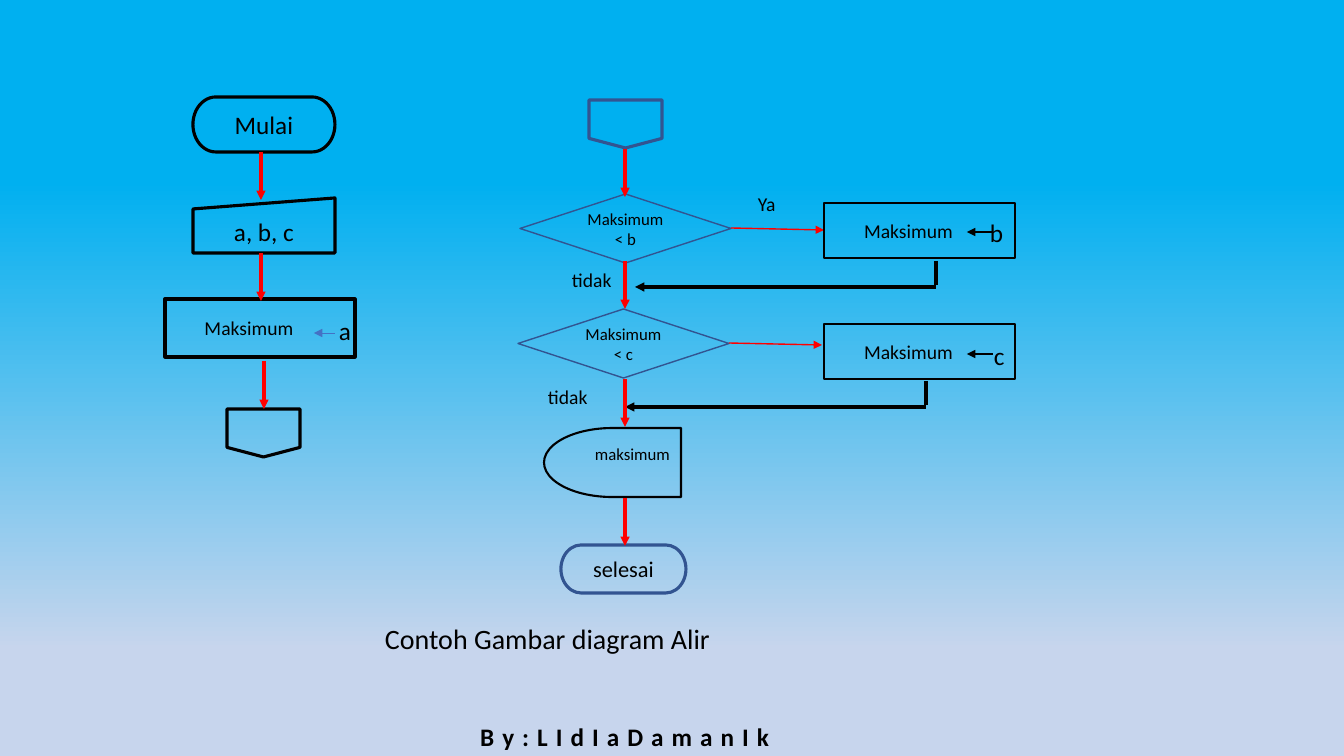
from lxml.etree import SubElement
from pptx import Presentation
from pptx.dml.color import RGBColor
from pptx.enum.shapes import MSO_CONNECTOR as Link, MSO_SHAPE as Shape
from pptx.enum.text import MSO_ANCHOR as Anchor, MSO_AUTO_SIZE as AutoSize, PP_ALIGN as Align
from pptx.oxml.ns import qn
from pptx.util import Pt

BLACK, RED, NAVY, BLUE = "000000", "FF0000", "325491", "4472C4"
SKY, MIST = "00B0F0", "C7D5ED"


def px(length):
    return round(length * 914400 / 100.8)


def color(code):
    return RGBColor.from_string(code)


def apply(target, formats):
    for key, value in formats.items():
        setattr(target, key, value)


class Flowchart:
    font = "Calibri"

    def __init__(self, slide):
        self.slide = slide

    def background(self, stops):
        fill = self.slide.background.fill
        fill.gradient()
        fill.gradient_angle = 270
        for stop, (position, code) in zip(fill.gradient_stops, stops):
            stop.position = position
            stop.color.rgb = color(code)

    def wording(self, frame, content, size, align, bold=False):
        paragraph = frame.paragraphs[0]
        paragraph.alignment = align
        run = paragraph.add_run()
        run.text = content
        apply(run.font, {"name": self.font, "size": Pt(size), "bold": bold})
        run.font.color.rgb = color(BLACK)
        return run

    def outline(self, line, code, weight):
        line.color.rgb = color(code)
        line.width = Pt(weight)

    def node(self, kind, box, code, weight, content="", size=18, shift=0, rotation=0):
        shape = self.slide.shapes.add_shape(kind, *map(px, box))
        shape.shadow.inherit = False
        shape.rotation = rotation
        shape.fill.background()
        self.outline(shape.line, code, weight)
        if content:
            frame = shape.text_frame
            apply(frame, {"word_wrap": True, "vertical_anchor": Anchor.MIDDLE,
                          "margin_right": px(10 + 2 * shift)})
            self.wording(frame, content, size, Align.CENTER)

    def label(self, box, content, size, align=Align.LEFT, bold=False):
        frame = self.slide.shapes.add_textbox(*map(px, box)).text_frame
        apply(frame, {"word_wrap": True, "auto_size": AutoSize.SHAPE_TO_FIT_TEXT})
        return self.wording(frame, content, size, align, bold)

    def link(self, start, end, code, weight, arrow=True):
        connector = self.slide.shapes.add_connector(
            Link.STRAIGHT, *map(px, (*start, *end)))
        self.outline(connector.line, code, weight)
        properties = connector._element.spPr
        if arrow:
            SubElement(properties.find(qn("a:ln")), qn("a:tailEnd"), type="triangle")
        SubElement(properties, qn("a:effectLst"))


def main():
    deck = Presentation()
    apply(deck, {"slide_width": px(1344), "slide_height": px(756)})
    chart = Flowchart(deck.slides.add_slide(deck.slide_layouts[6]))
    chart.background([(0.24, SKY), (0.86, MIST)])

    byline = chart.label((436, 716, 378, 40), "B y : L I d I a D a m a n I k",
                         18, Align.CENTER, True)
    byline._r.get_or_add_rPr().set("spc", "85")

    chart.node(Shape.FLOWCHART_TERMINATOR, (193, 97, 142, 55), BLACK, 2.25, "Mulai")
    chart.node(Shape.FLOWCHART_MANUAL_INPUT, (193, 198, 142, 55), BLACK, 2.25, "a, b, c")
    chart.node(Shape.FLOWCHART_PROCESS, (165, 299, 190, 58), BLACK, 2.25,
               "Maksimum", 14, shift=11)
    chart.link((335, 333), (314, 333), BLUE, 0.5)
    chart.label((329, 310, 32, 40), "a", 18)

    for left, top, code in ((227, 409, BLACK), (589, 100, NAVY)):
        chart.node(Shape.FLOWCHART_OFFPAGE_CONNECTOR, (left, top, 73, 48), code, 2.25)

    for left, top, test in ((520, 194, "Maksimum < b"), (518, 309, "Maksimum < c")):
        chart.node(Shape.DIAMOND, (left, top, 211, 69), NAVY, 1, test, 12)
        chart.link((left + 211, top + 34), (left + 304, top + 36), RED, 1)

    for left, top in ((562, 263), (538, 380)):
        chart.label((left, top, 101, 34), "tidak", 14)
    chart.label((748, 187, 79, 34), "Ya", 14)

    for top, value, value_left, value_top, arrow_y, bend, bend_y, join in (
            (203, "b", 980, 212, 232, 936, 287, 635),
            (324, "c", 984, 335, 354, 926, 407, 625)):
        chart.node(Shape.FLOWCHART_PROCESS, (824, top, 191, 55), BLACK, 1,
                   "Maksimum", 14, shift=11)
        chart.link((993, arrow_y), (967, arrow_y), BLACK, 1)
        chart.label((value_left, value_top, 28, 40), value, 18)
        chart.link((bend, bend_y - 26), (bend, bend_y - 2), BLACK, 2.25, arrow=False)
        chart.link((bend, bend_y), (join, bend_y), BLACK, 2.25)

    chart.node(Shape.FLOWCHART_DELAY, (544, 428, 137, 69), BLACK, 1.5, rotation=180)
    chart.label((585, 439, 101, 30), "maksimum", 12)
    chart.node(Shape.FLOWCHART_TERMINATOR, (561, 545, 125, 48), NAVY, 2.25, "selesai", 16)

    for x, y in ((261, 152), (261, 253), (264, 361),
                 (625, 149), (625, 261), (625, 379), (625, 498)):
        chart.link((x, y), (x, y + 48), RED, 2.25)

    chart.label((375, 617, 520, 44), "Contoh Gambar diagram Alir", 20)
    deck.save("out.pptx")


if __name__ == "__main__":
    main()
